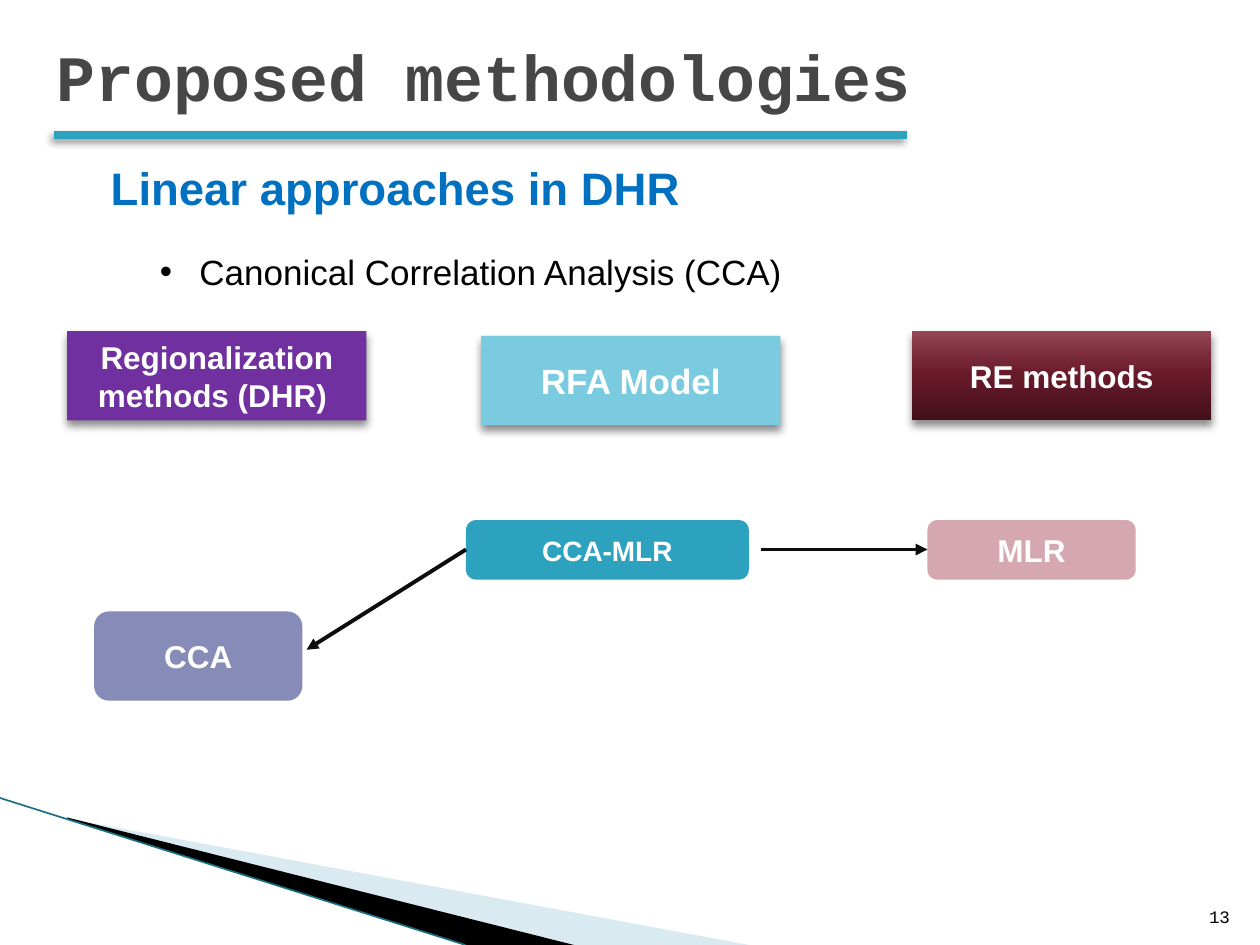
from dataclasses import dataclass

from lxml import etree
from pptx import Presentation
from pptx.dml.color import RGBColor
from pptx.enum.dml import MSO_LINE
from pptx.enum.shapes import MSO_CONNECTOR, MSO_SHAPE
from pptx.enum.text import MSO_ANCHOR, MSO_AUTO_SIZE, PP_ALIGN
from pptx.oxml import parse_xml
from pptx.oxml.ns import nsdecls, qn
from pptx.util import Pt


@dataclass(frozen=True)
class Theme:
    sans: str = "Arial"
    mono: str = "Courier New"
    title: str = "464646"
    heading: str = "0070C0"
    black: str = "000000"
    white: str = "FFFFFF"
    teal: str = "2DA2BF"
    sky: str = "7ACBE0"
    purple: str = "7030A0"
    lavender: str = "878BB8"
    rose: str = "D5A7B1"
    arrow: str = "0D0D0D"
    wedge: str = "A0CBDC"
    edge: str = "1A7083"
    wine: tuple = ((0, "420F1A"), (50, "681A2B"), (70, "772939"), (100, "944755"))
    title_size: int = 37
    heading_size: int = 26
    large: int = 20
    label: int = 18
    small: int = 16
    number: int = 10


T = Theme()


def write(p, text, size, color, font=T.sans, bold=True):
    r = p.add_run()
    r.text = text
    r.font.name, r.font.size, r.font.bold = font, Pt(size), bold
    r.font.color.rgb = RGBColor.from_string(color)


def add_shadow(sp, opacity, blur, distance, angle):
    """Give a shape or connector a black outer shadow; lengths in points."""
    effects = sp._element.spPr.find(qn("a:effectLst"))
    effects.append(parse_xml(
        f'<a:outerShdw {nsdecls("a")} blurRad="{Pt(blur)}" dist="{Pt(distance)}" '
        f'dir="{angle * 60000}" algn="ctr" rotWithShape="0"><a:srgbClr val="{T.black}">'
        f'<a:alpha val="{opacity * 1000}"/></a:srgbClr></a:outerShdw>'))


prs = Presentation()
prs.slide_width, prs.slide_height = Pt(720), Pt(540)
s = prs.slides.add_slide(prs.slide_layouts[1])

# Corner wedges
wedges = [
    ([(39.6, 468.5), (428, 540), (328, 540), (39.6, 468)], T.wedge, 40),
    ([(38.2, 467.3), (328, 540), (266, 540), (38.9, 468)], T.black, 100),
]
for points, color, opacity in wedges:
    builder = s.shapes.build_freeform(*points[0], scale=Pt(1))
    builder.add_line_segments(points[1:], close=True)
    sp = builder.convert_to_shape()
    sp.shadow.inherit = False
    sp.line.fill.background()
    sp.fill.solid()
    sp.fill.fore_color.rgb = RGBColor.from_string(color)
    if opacity < 100:
        clr = sp._element.spPr.find(qn("a:solidFill"))[0]
        etree.SubElement(clr, qn("a:alpha")).set("val", str(opacity * 1000))

# Title and list
title, body = s.placeholders
title.left, title.top, title.width, title.height = Pt(25.2), Pt(-2), Pt(648), Pt(90)
tf = title.text_frame
tf.auto_size, tf.vertical_anchor = MSO_AUTO_SIZE.NONE, MSO_ANCHOR.MIDDLE
tf.paragraphs[0].alignment = PP_ALIGN.LEFT
write(tf.paragraphs[0], "Proposed methodologies", T.title_size, T.title, T.mono)

body.left, body.top, body.width, body.height = Pt(84.2), Pt(139.7), Pt(373), Pt(31.5)
tf = body.text_frame
tf.auto_size, tf.word_wrap = MSO_AUTO_SIZE.SHAPE_TO_FIT_TEXT, False
p = tf.paragraphs[0]
p_pr = p._p.get_or_add_pPr()
p_pr.set("marL", str(Pt(22.5)))
p_pr.set("indent", str(Pt(-22.5)))
etree.SubElement(p_pr, qn("a:buFont")).set("typeface", T.sans)
etree.SubElement(p_pr, qn("a:buChar")).set("char", "•")
p.space_before = Pt(0)
write(p, "Canonical Correlation Analysis (CCA)", T.large, T.black, bold=False)

# Heading and slide number
sp = s.shapes.add_textbox(Pt(56.2), Pt(87.8), Pt(343.4), Pt(38.9))
tf = sp.text_frame
tf.word_wrap, tf.auto_size = False, MSO_AUTO_SIZE.SHAPE_TO_FIT_TEXT
write(tf.paragraphs[0], "Linear approaches in DHR", T.heading_size, T.heading)

sp = s.shapes.add_textbox(Pt(681.1), Pt(504.7), Pt(28.8), Pt(28.8))
tf = sp.text_frame
tf.word_wrap, tf.vertical_anchor = True, MSO_ANCHOR.BOTTOM
tf.paragraphs[0].alignment = PP_ALIGN.RIGHT
write(tf.paragraphs[0], "13", T.number, T.black, T.mono, bold=False)

# Column headers (rectangles) and their methods (rounded)
header, method = MSO_SHAPE.RECTANGLE, MSO_SHAPE.ROUNDED_RECTANGLE
boxes = [
    (header, "Regionalization methods (DHR) ", 38.4, 189.2, 171, 51, T.purple, T.label),
    (header, "RFA Model", 275, 192, 171, 51, T.sky, T.large),
    (header, "RE methods", 521.2, 189.2, 171, 51, T.wine, T.label),
    (method, "CCA", 53.8, 349.4, 119, 51, T.lavender, T.label),
    (method, "MLR", 530, 297.2, 119, 34, T.rose, T.label),
    (method, "CCA-MLR", 266.3, 297.2, 161.6, 34, T.teal, T.small),
]
for kind, text, x, y, w, h, fill, size in boxes:
    sp = s.shapes.add_shape(kind, Pt(x), Pt(y), Pt(w), Pt(h))
    sp.shadow.inherit = False
    sp.line.fill.background()
    if fill == T.wine:
        stops = "".join(f'<a:gs pos="{pos * 1000}"><a:srgbClr val="{color}"/></a:gs>'
                        for pos, color in fill)
        sp._element.spPr.find(qn("a:prstGeom")).addnext(parse_xml(
            f'<a:gradFill {nsdecls("a")} rotWithShape="1"><a:gsLst>{stops}</a:gsLst>'
            f'<a:lin ang="{270 * 60000}" scaled="0"/></a:gradFill>'))
    else:
        sp.fill.solid()
        sp.fill.fore_color.rgb = RGBColor.from_string(fill)
    if kind == header:
        add_shadow(sp, 45, 5, 3, 90)
    tf = sp.text_frame
    tf.word_wrap, tf.vertical_anchor = True, MSO_ANCHOR.MIDDLE
    tf.paragraphs[0].alignment = PP_ALIGN.CENTER
    write(tf.paragraphs[0], text, size, T.white)

# Wedge edge, title rule and arrows
lines = [
    ("edge", 0, 456, 266, 540, T.edge, 0.95),
    ("rule", 31, 77, 518.4, 77, T.teal, 4.5),
    ("arrow", 266.3, 314, 175.2, 371.3, T.arrow, 2.25),
    ("arrow", 434.9, 314, 530, 314, T.arrow, 2.25),
]
for role, x1, y1, x2, y2, color, width in lines:
    sp = s.shapes.add_connector(MSO_CONNECTOR.STRAIGHT, Pt(x1), Pt(y1), Pt(x2), Pt(y2))
    sp.line.width, sp.line.dash_style = Pt(width), MSO_LINE.SOLID
    sp.line.color.rgb = RGBColor.from_string(color)
    if role == "arrow":
        etree.SubElement(sp.line._get_or_add_ln(), qn("a:tailEnd")).set("type", "triangle")
    etree.SubElement(sp._element.spPr, qn("a:effectLst"))
    if role == "rule":
        add_shadow(sp, 40, 4, 3, 135)

prs.save("out.pptx")
